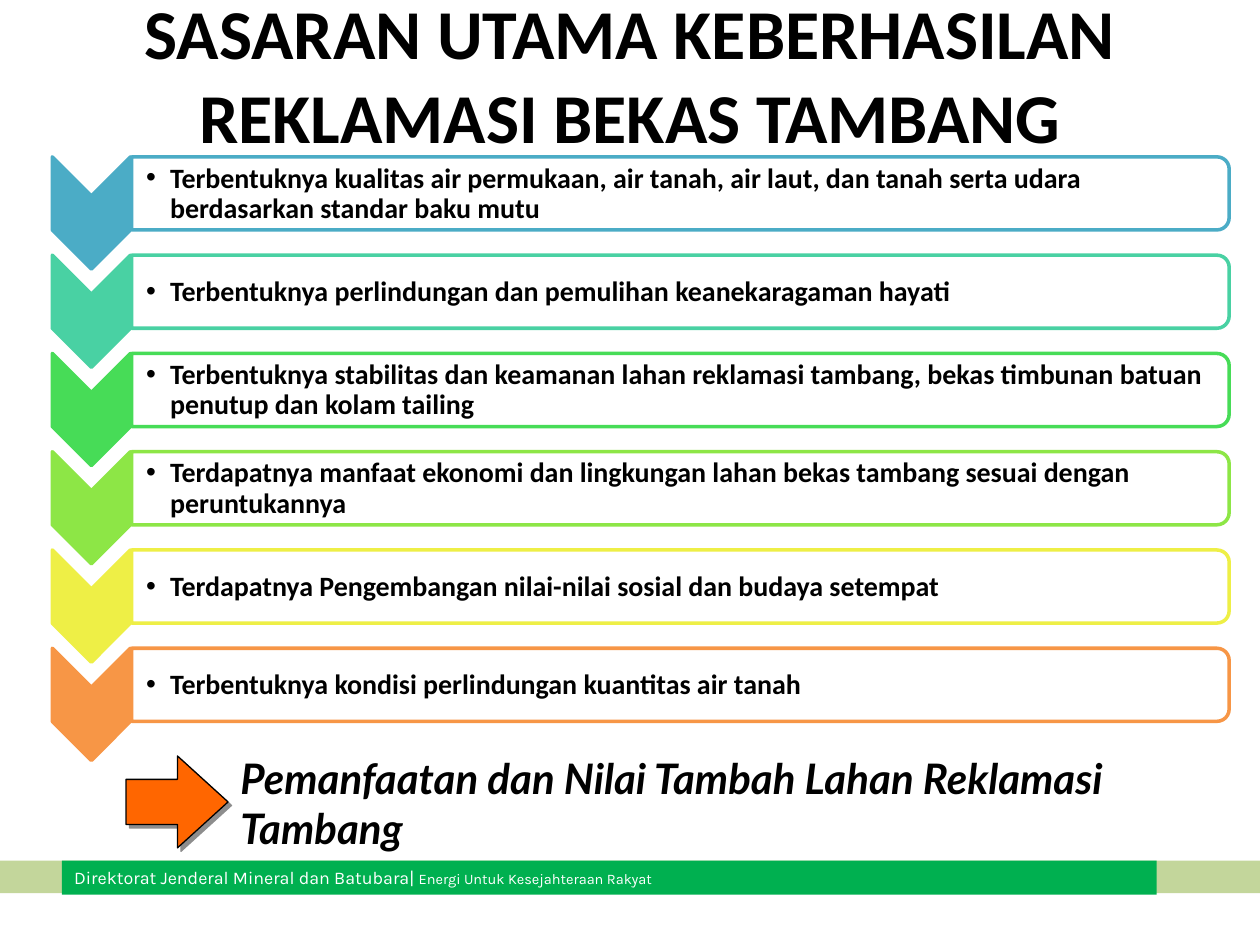
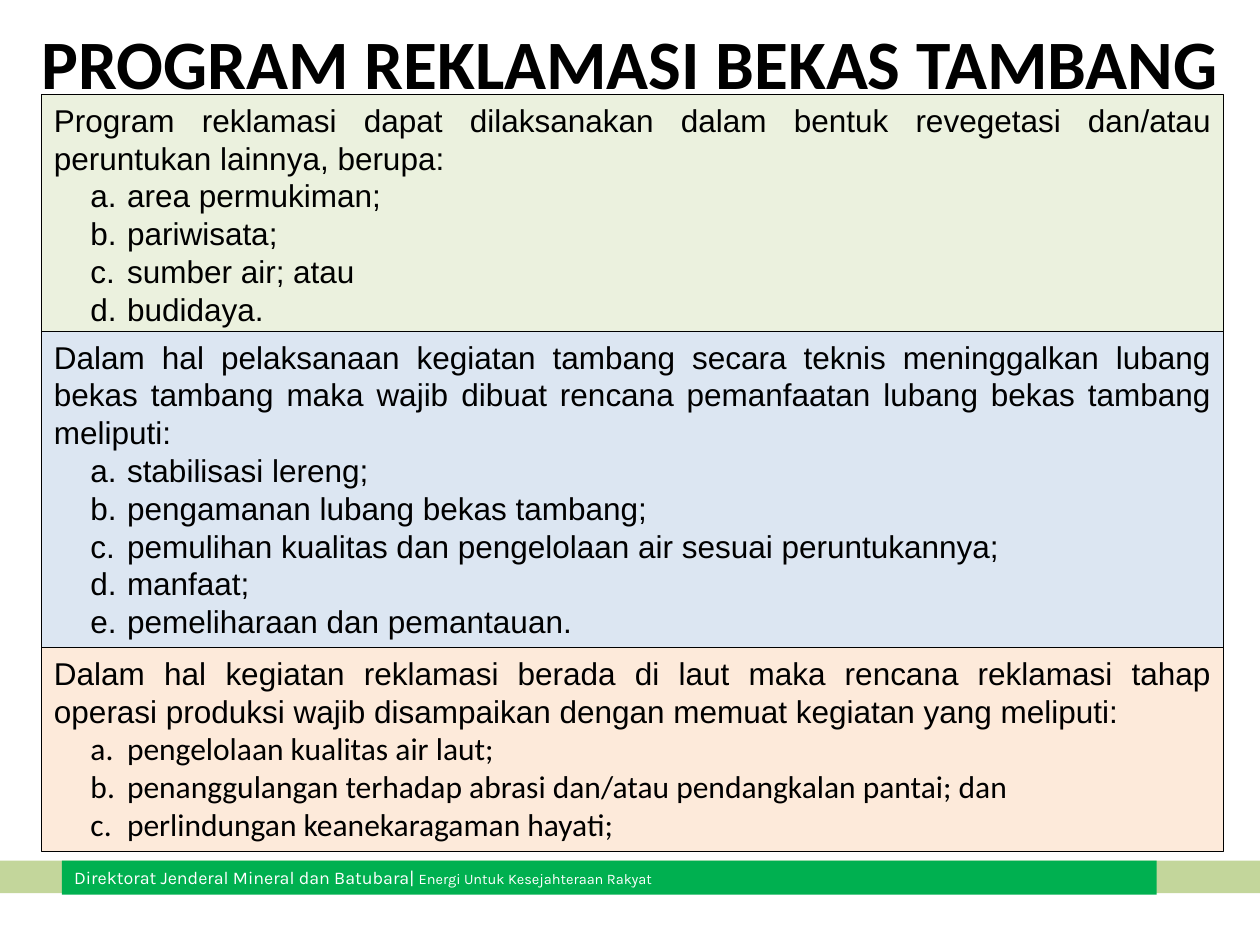
"""Build two slides on the goals and programmes of mine reclamation."""
from lxml.etree import SubElement
from pptx import Presentation
from pptx.dml.color import RGBColor
from pptx.enum.shapes import MSO_SHAPE as Shape
from pptx.enum.text import MSO_ANCHOR as Anchor, PP_ALIGN as Align
from pptx.oxml.ns import qn
from pptx.util import Inches, Pt

COLORS = {
    "black": "000000", "white": "FFFFFF", "arrow": "FF6600", "shadow": "1C1C1C",
    "footer_band": "C3D69B", "footer": "00B050",
    "blue": "4BACC6", "teal": "49D1A3", "green": "47DC57",
    "lime": "8DE646", "yellow": "EEEF46", "orange": "F79646",
    "pale_green": "EBF1DE", "pale_blue": "DCE6F2", "pale_orange": "FDEADA",
}


def write_text(shape, lines, size=18, font="Calibri", color="black", bold=False,
               italic=False, align=Align.LEFT, anchor=Anchor.TOP, insets=None,
               bullet=None, indent=0.0, hanging=0.0, spacing=None, same_line=False):
    frame = shape.text_frame
    frame.word_wrap = True
    frame.vertical_anchor = anchor
    if insets:
        (frame.margin_left, frame.margin_top,
         frame.margin_right, frame.margin_bottom) = map(Inches, insets)
    for line in lines:
        paragraph = frame.paragraphs[-1]
        if paragraph.runs and not same_line:
            paragraph = frame.add_paragraph()
        paragraph.alignment = align
        if bullet:
            properties = paragraph._p.get_or_add_pPr()
            properties.set("marL", str(Inches(indent)))
            properties.set("indent", str(-Inches(hanging)))
            if bullet == "•":
                SubElement(properties, qn("a:buFont"), typeface="Arial")
                SubElement(properties, qn("a:buChar"), char=bullet)
            else:
                SubElement(properties, qn("a:buAutoNum"), type=bullet)
        if spacing:
            paragraph.line_spacing = spacing
        run = paragraph.add_run()
        run.text = line
        run.font.size = Pt(size)
        run.font.name = font
        run.font.bold = bold
        run.font.italic = italic
        run.font.color.rgb = RGBColor.from_string(COLORS[color])


def add_shape(slide, kind, box, fill, line=None, width=0.75, rotation=0):
    shape = slide.shapes.add_shape(kind, *map(Inches, box))
    shape.shadow.inherit = False
    shape.rotation = rotation
    shape.fill.solid()
    shape.fill.fore_color.rgb = RGBColor.from_string(COLORS[fill])
    if line:
        shape.line.color.rgb = RGBColor.from_string(COLORS[line])
        shape.line.width = Pt(width)
    else:
        shape.line.fill.background()
    return shape


presentation = Presentation()
presentation.slide_width = Inches(10)
presentation.slide_height = Inches(7.5)

titles = [
    ("SASARAN UTAMA KEBERHASILAN REKLAMASI BEKAS TAMBANG", 40, (0, 0.08, 10, 1)),
    ("PROGRAM REKLAMASI BEKAS TAMBANG", 39.6, (0.04, 0.08, 9.92, 0.82)),
]
for text, size, box in titles:
    slide = presentation.slides.add_slide(presentation.slide_layouts[5])
    title = slide.shapes.title
    title.left, title.top, title.width, title.height = map(Inches, box)
    write_text(title, [text], size=size, bold=True, align=Align.CENTER,
               anchor=Anchor.MIDDLE)
    add_shape(slide, Shape.RECTANGLE, (0, 6.83, 10, 0.26), "footer_band")
    footer = add_shape(slide, Shape.RECTANGLE, (0.49, 6.83, 8.69, 0.27), "footer")
    write_text(footer, ["Direktorat Jenderal Mineral dan Batubara| "], size=10.2,
               font="Karla", color="white", anchor=Anchor.MIDDLE)
    write_text(footer, ["Energi Untuk Kesejahteraan Rakyat"], size=8.3,
               font="Karla", color="white", anchor=Anchor.MIDDLE, same_line=True)

goals_slide, program_slide = presentation.slides

goals = [
    ("blue", "Terbentuknya kualitas air permukaan, air tanah, air laut, dan tanah "
             "serta udara berdasarkan standar baku mutu"),
    ("teal", "Terbentuknya perlindungan dan pemulihan keanekaragaman hayati"),
    ("green", "Terbentuknya stabilitas dan keamanan lahan reklamasi tambang, bekas "
              "timbunan batuan penutup dan kolam tailing"),
    ("lime", "Terdapatnya manfaat ekonomi dan lingkungan lahan bekas tambang sesuai "
             "dengan peruntukannya"),
    ("yellow", "Terdapatnya Pengembangan nilai-nilai sosial dan budaya setempat"),
    ("orange", "Terbentuknya kondisi perlindungan kuantitas air tanah"),
]
for row, (color, goal) in enumerate(goals):
    offset = 0.78 * row
    add_shape(goals_slide, Shape.CHEVRON, (0.28, 1.38 + offset, 0.89, 0.62),
              color, color, width=2, rotation=90)
    add_shape(goals_slide, Shape.ROUND_2_SAME_RECTANGLE,
              (5.11, -2.82 + offset, 0.58, 8.71), "white", color, width=2, rotation=90)
    goal_box = goals_slide.shapes.add_textbox(
        *map(Inches, (1.04, 1.28 + offset, 8.68, 0.52)))
    write_text(goal_box, [goal], size=16, bold=True, anchor=Anchor.MIDDLE,
               insets=(0.12, 0.01, 0.01, 0.01), bullet="•", indent=0.19,
               hanging=0.19, spacing=0.9)

arrow = add_shape(goals_slide, Shape.RIGHT_ARROW, (1, 6, 0.81, 0.73), "arrow", "black")
arrow.adjustments[0] = 0.49
arrow.adjustments[1] = 0.55
effects = arrow._element.spPr.find(qn("a:effectLst"))
shadow = SubElement(effects, qn("a:outerShdw"), dist=str(Pt(2.8)), dir="2700000",
                    algn="ctr", rotWithShape="0")
shadow_color = SubElement(shadow, qn("a:srgbClr"), val=COLORS["shadow"])
SubElement(shadow_color, qn("a:alpha"), val="50000")

conclusion = goals_slide.shapes.add_textbox(*map(Inches, (1.81, 5.92, 8.1, 0.91)))
write_text(conclusion, ["Pemanfaatan dan Nilai Tambah Lahan Reklamasi Tambang"],
           size=24, font="Lato", bold=True, italic=True)

programs = [
    (0.75, 1.92, "pale_green", "Arial", Align.JUSTIFY,
     "Program reklamasi dapat dilaksanakan dalam bentuk revegetasi dan/atau "
     "peruntukan lainnya, berupa:",
     ["area permukiman;", "pariwisata;", "sumber air; atau", "budidaya."]),
    (2.63, 2.52, "pale_blue", "Arial", Align.JUSTIFY,
     "Dalam hal pelaksanaan kegiatan tambang secara teknis meninggalkan lubang bekas "
     "tambang maka wajib dibuat rencana pemanfaatan lubang bekas tambang meliputi:",
     ["stabilisasi lereng;", "pengamanan lubang bekas tambang;",
      "pemulihan kualitas dan pengelolaan air sesuai peruntukannya;", "manfaat;",
      "pemeliharaan dan pemantauan."]),
    (5.14, 1.62, "pale_orange", "Calibri", Align.LEFT,
     "Dalam hal kegiatan reklamasi berada di laut maka rencana reklamasi tahap operasi "
     "produksi wajib disampaikan dengan memuat kegiatan yang meliputi:",
     ["pengelolaan kualitas air laut;",
      "penanggulangan terhadap abrasi dan/atau pendangkalan pantai; dan",
      "perlindungan keanekaragaman hayati;"]),
]
for top, height, fill, list_font, list_align, intro, items in programs:
    panel = add_shape(program_slide, Shape.RECTANGLE, (0.33, top, 9.38, height),
                      fill, "black")
    write_text(panel, [intro], font="Arial", align=Align.JUSTIFY, spacing=Pt(21.6))
    write_text(panel, items, font=list_font, align=list_align,
               bullet="alphaLcPeriod", indent=0.58, hanging=0.29, spacing=Pt(21.6))

presentation.save("out.pptx")
